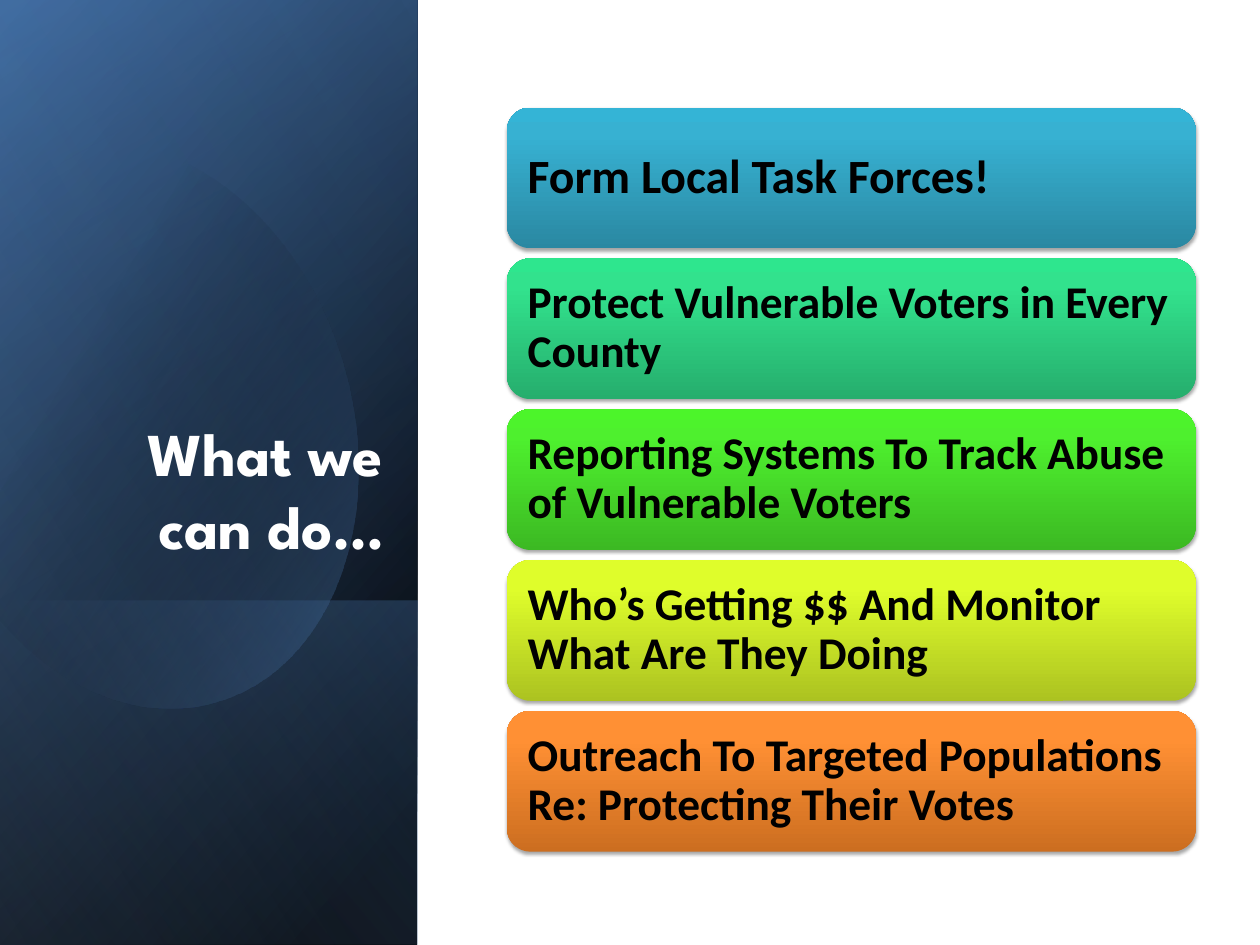
from lxml.etree import SubElement
from pptx import Presentation
from pptx.dml.color import RGBColor
from pptx.enum.shapes import MSO_SHAPE
from pptx.enum.text import MSO_ANCHOR, PP_ALIGN
from pptx.oxml.ns import qn
from pptx.util import Cm, Pt

BLACK = RGBColor(0x00, 0x00, 0x00)
WHITE = RGBColor(0xFF, 0xFF, 0xFF)
NAVY = RGBColor(0x37, 0x60, 0x92)
BLUE = RGBColor(0x4F, 0x81, 0xBD)
PALE_BLUE = RGBColor(0x95, 0xB3, 0xD7)

# Text, size, and gradient colours from bottom to top
CARDS = [
    ("Form Local Task Forces!", 40,
     RGBColor(0x2A, 0x88, 0xA2), RGBColor(0x37, 0xB1, 0xD2), RGBColor(0x34, 0xB4, 0xD6)),
    ("Protect Vulnerable Voters in Every County", 38,
     RGBColor(0x26, 0xAE, 0x6D), RGBColor(0x32, 0xE2, 0x8D), RGBColor(0x2E, 0xE6, 0x8E)),
    ("Reporting Systems To Track Abuse of Vulnerable Voters", 38,
     RGBColor(0x3C, 0xB9, 0x23), RGBColor(0x4E, 0xF0, 0x2E), RGBColor(0x4C, 0xF5, 0x2A)),
    ("Who’s Getting $$ And Monitor What Are They Doing", 38,
     RGBColor(0xAC, 0xC3, 0x21), RGBColor(0xDF, 0xFD, 0x2B), RGBColor(0xE1, 0xFF, 0x2B)),
    ("Outreach To Targeted Populations Re: Protecting Their Votes", 38,
     RGBColor(0xCC, 0x6E, 0x20), RGBColor(0xFF, 0x90, 0x34), RGBColor(0xFF, 0x91, 0x36)),
]

# Oval outline in cm from the panel corner: two controls and an end per curve
OVAL_START = (3.58, 4.24)
OVAL_RIGHT = [
    ((6.38, 4.57), (9.09, 7.14), (10.16, 10.82)),
    ((11.46, 15.34), (9.75, 19.79), (6.38, 20.75)),
    ((4.27, 21.36), (1.98, 20.47), (0.25, 18.62)),
]
OVAL_LEFT = [(0, 18.35), (0, 5.2)]
OVAL_TOP = [
    ((0.45, 4.83), (1, 4.55), (1.65, 4.39)),
    ((2.29, 4.22), (2.95, 4.17), OVAL_START),
]


def add_color(parent, color, alpha):
    clr = SubElement(parent, qn("a:srgbClr"), val=str(color))
    if alpha < 100:
        SubElement(clr, qn("a:alpha"), val=str(alpha * 1000))


def set_gradient(sp, stops, angle):
    """Fill with (position, colour, opacity) stops; angle runs clockwise."""
    sp.line.fill.background()
    sp.shadow.inherit = False
    sp.fill.gradient()
    grad = sp._element.spPr.find(qn("a:gradFill"))
    for child in list(grad):
        grad.remove(child)
    grad.set("rotWithShape", "1")
    gs_list = SubElement(grad, qn("a:gsLst"))
    for pos, color, alpha in stops:
        add_color(SubElement(gs_list, qn("a:gs"), pos=str(pos * 1000)), color, alpha)
    SubElement(grad, qn("a:lin"), ang=str(angle * 60000), scaled="0")


def set_shadow(sp):
    effects = sp._element.spPr.find(qn("a:effectLst"))
    shadow = SubElement(effects, qn("a:outerShdw"), blurRad=str(Pt(3.1)),
                        dist=str(Pt(1.8)), dir="5400000", rotWithShape="0")
    add_color(shadow, BLACK, 35)


def set_text(sp, text, font, size, color, align=PP_ALIGN.LEFT,
             anchor=MSO_ANCHOR.MIDDLE, margin=0, spacing=None):
    tf = sp.text_frame
    tf.word_wrap = True
    tf.vertical_anchor = anchor
    tf.margin_left = tf.margin_right = tf.margin_top = tf.margin_bottom = Cm(margin)
    p = tf.paragraphs[0]
    p.alignment = align
    p.line_spacing = spacing
    r = p.add_run()
    r.text = text
    r.font.name = font
    r.font.size = Pt(size)
    r.font.bold = True
    r.font.color.rgb = color


def add_turned_layer(s, x, y, w, h, stops, angle):
    """Rectangle turned by 90° and mirrored that covers the given box."""
    sp = s.shapes.add_shape(MSO_SHAPE.RECTANGLE, Cm(x + (w - h) / 2),
                            Cm(y + (h - w) / 2), Cm(h), Cm(w))
    sp.rotation = 90
    sp._element.spPr.xfrm.set("flipH", "1")
    set_gradient(sp, stops, angle)


def curve_points(start, curves, steps=24):
    points = []
    for c1, c2, end in curves:
        for i in range(1, steps + 1):
            t = i / steps
            u = 1 - t
            points.append(tuple(
                u**3 * a + 3 * u * u * t * b + 3 * u * t * t * c + t**3 * d
                for a, b, c, d in zip(start, c1, c2, end)))
        start = end
    return points


def add_oval(s, x, y):
    points = (curve_points(OVAL_START, OVAL_RIGHT) + OVAL_LEFT
              + curve_points(OVAL_LEFT[-1], OVAL_TOP))
    outline = [(Cm(x + px), Cm(y + py)) for px, py in points]
    builder = s.shapes.build_freeform(*outline[-1])
    builder.add_line_segments(outline, close=True)
    sp = builder.convert_to_shape()
    set_gradient(sp, [(29, BLACK, 0), (100, BLUE, 43)], 30)


def add_title_panel(s, x, y, w, h):
    # Gradient layers
    add_turned_layer(s, x, y, w, h, [(8, BLACK, 100), (100, NAVY, 100)], 50)
    add_turned_layer(s, x, y, w, h, [(0, BLACK, 0), (99, BLUE, 46)], 30)
    band = 10.19
    add_turned_layer(s, x, y + h - band, w, band, [(2, BLUE, 29), (100, BLACK, 30)], 130)
    add_oval(s, x, y)
    add_turned_layer(s, x, y, w, h, [(0, BLACK, 0), (99, PALE_BLUE, 11)], 120)
    # Title
    sp = s.shapes.add_textbox(Cm(x + 1.8), Cm(y + 6.86), Cm(9.53), Cm(9.75))
    set_text(sp, "What we can do…", "League Spartan", 51, WHITE,
             align=PP_ALIGN.RIGHT, anchor=MSO_ANCHOR.BOTTOM)


def add_cards(s, x, y, w, h, gap=0.3):
    card_h = (h - gap * (len(CARDS) - 1)) / len(CARDS)
    for i, (text, size, dark, middle, light) in enumerate(CARDS):
        sp = s.shapes.add_shape(MSO_SHAPE.ROUNDED_RECTANGLE, Cm(x),
                                Cm(y + i * (card_h + gap)), Cm(w), Cm(card_h))
        set_gradient(sp, [(0, dark, 100), (80, middle, 100), (100, light, 100)], 270)
        set_shadow(sp)
        set_text(sp, text, "Calibri", size, BLACK, margin=0.41, spacing=0.9)


def main():
    prs = Presentation()
    prs.slide_width, prs.slide_height = Cm(37.26), Cm(27.94)
    s = prs.slides.add_slide(prs.slide_layouts[6])
    add_title_panel(s, 0, 0, 12.34, 27.94)
    add_cards(s, 14.99, 3.18, 20.37, 22)
    prs.save("out.pptx")


if __name__ == "__main__":
    main()
